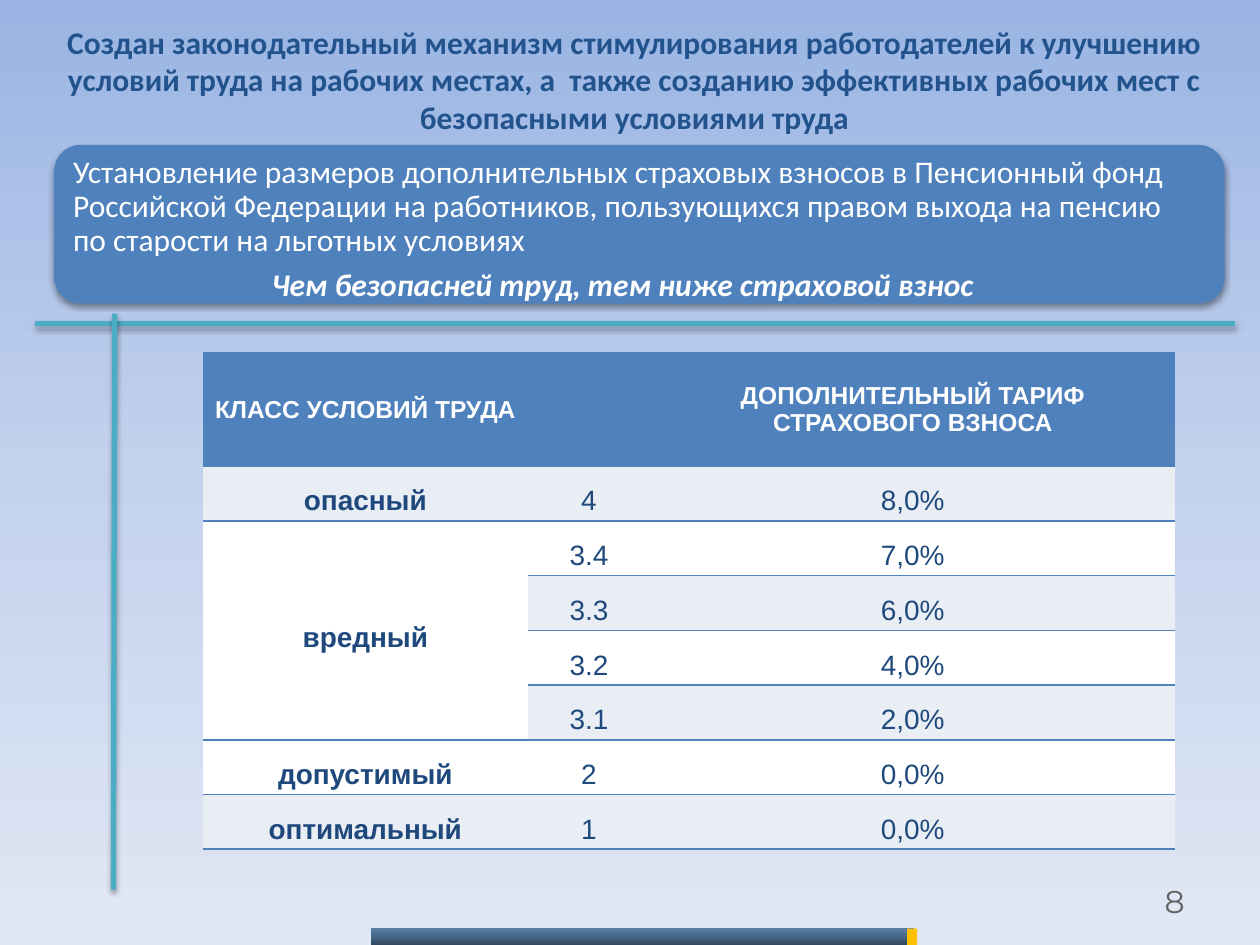
from dataclasses import dataclass

from lxml import etree
from pptx import Presentation
from pptx.dml.color import RGBColor
from pptx.enum.shapes import MSO_CONNECTOR, MSO_SHAPE
from pptx.enum.text import MSO_ANCHOR, MSO_AUTO_SIZE, PP_ALIGN
from pptx.oxml.ns import qn
from pptx.util import Inches, Pt

TOP, MIDDLE = MSO_ANCHOR.TOP, MSO_ANCHOR.MIDDLE
LEFT, CENTER, RIGHT = PP_ALIGN.LEFT, PP_ALIGN.CENTER, PP_ALIGN.RIGHT
RECTANGLE, ROUNDED = MSO_SHAPE.RECTANGLE, MSO_SHAPE.ROUNDED_RECTANGLE
STRAIGHT = MSO_CONNECTOR.STRAIGHT


@dataclass(frozen=True)
class Theme:
    blue: str = "4F81BD"
    navy: str = "1F497D"
    title: str = "23538D"
    teal: str = "4BACC6"
    amber: str = "FFC000"
    white: str = "FFFFFF"
    band: str = "E9EDF4"
    grey: str = "626262"
    backdrop: tuple = ((0, "9AB5E4", 100), (50, "C2D1ED", 100), (100, "E1E8F5", 100))
    footer: tuple = ((0, "003C73", 60), (100, "001C35", 80))
    text_font: str = "Calibri"
    table_font: str = "Arial"
    number_font: str = "Montserrat"
    text_size: int = 18
    header_size: int = 14
    body_size: int = 16


THEME = Theme()

TITLE = ("Создан законодательный механизм стимулирования работодателей к улучшению "
         "условий труда на рабочих местах, а  также созданию эффективных рабочих мест "
         "с безопасными условиями труда")
MEASURE = ("Установление размеров дополнительных страховых взносов в Пенсионный фонд "
           "Российской Федерации на работников, пользующихся правом выхода на пенсию "
           "по старости на льготных условиях")
SLOGAN = " Чем безопасней труд, тем ниже страховой взнос"
TARIFFS = [
    ("КЛАСС УСЛОВИЙ ТРУДА", "", "ДОПОЛНИТЕЛЬНЫЙ ТАРИФ СТРАХОВОГО ВЗНОСА"),
    ("опасный", "4", "8,0%"),
    ("вредный", "3.4", "7,0%"),
    ("", "3.3", "6,0%"),
    ("", "3.2", "4,0%"),
    ("", "3.1", "2,0%"),
    ("допустимый", "2", "0,0%"),
    ("оптимальный", "1", "0,0%"),
]
HARMFUL_ROWS = (2, 5)


def inches(*lengths):
    return [Inches(length) for length in lengths]


def add_element(parent, tag, **attributes):
    return etree.SubElement(parent, qn(tag), {k: str(v) for k, v in attributes.items()})


def add_color(parent, color, opacity=100):
    swatch = add_element(parent, "a:srgbClr", val=color)
    if opacity < 100:
        add_element(swatch, "a:alpha", val=opacity * 1000)


def paint_gradient(fill, owner, stops):
    """Fill from top to bottom with (position, colour, opacity) stops."""
    fill.gradient()
    gradient = next(owner.iter(qn("a:gradFill")))
    stop_list = gradient.find(qn("a:gsLst"))
    for stop in list(stop_list):
        stop_list.remove(stop)
    for position, color, opacity in stops:
        add_color(add_element(stop_list, "a:gs", pos=position * 1000), color, opacity)
    gradient.find(qn("a:lin")).set("ang", "5400000")


def cast_shadow(shape, distance, opacity):
    properties = shape._element.spPr
    effects = properties.find(qn("a:effectLst"))
    if effects is None:
        effects = add_element(properties, "a:effectLst")
    shadow = add_element(effects, "a:outerShdw", blurRad=Pt(3.1), dist=Pt(distance),
                         dir=5400000, rotWithShape=0)
    add_color(shadow, "000000", opacity)


def style_paragraph(paragraph, text, color, font=THEME.text_font, size=THEME.text_size,
                    align=LEFT, bold=False, italic=False, spacing=None):
    paragraph.text = text
    paragraph.alignment = align
    if spacing:
        paragraph.line_spacing = spacing
    for run in paragraph.runs:
        run.font.name = font
        run.font.size = Pt(size)
        run.font.bold = bold
        run.font.italic = italic
        run.font.color.rgb = RGBColor.from_string(color)


def add_block(shapes, kind, box, color=None):
    block = shapes.add_shape(kind, *inches(*box))
    block.shadow.inherit = False
    block.line.fill.background()
    if color:
        block.fill.solid()
        block.fill.fore_color.rgb = RGBColor.from_string(color)
    return block


def add_text_frame(shapes, box):
    frame = shapes.add_textbox(*inches(*box)).text_frame
    frame.word_wrap = True
    frame.vertical_anchor = MIDDLE
    return frame


def add_rule(slide, start, end):
    rule = slide.shapes.add_connector(STRAIGHT, *inches(*start, *end))
    rule.line.color.rgb = RGBColor.from_string(THEME.teal)
    rule.line.width = Pt(3)
    cast_shadow(rule, 1.8, 35)


def set_title(slide):
    title = slide.shapes.title
    title.left, title.top, title.width, title.height = inches(0.35, 0.13, 9.37, 1.01)
    frame = title.text_frame
    frame.vertical_anchor = TOP
    frame.auto_size = MSO_AUTO_SIZE.NONE
    style_paragraph(frame.paragraphs[0], TITLE, THEME.title, align=CENTER, bold=True)


def add_measure_panel(slide):
    panel = slide.shapes.add_group_shape().shapes
    cast_shadow(add_block(panel, ROUNDED, (0.43, 1.15, 9.29, 1.26), THEME.blue), 1.6, 38)
    frame = add_text_frame(panel, (0.5, 1.24, 8.83, 1.17))
    frame.margin_left = frame.margin_right = Inches(0.08)
    frame.margin_top = frame.margin_bottom = Inches(0.08)
    measure = frame.paragraphs[0]
    style_paragraph(measure, MEASURE, THEME.white, spacing=0.9)
    measure.space_after = Pt(6)
    style_paragraph(frame.add_paragraph(), SLOGAN, THEME.white, align=CENTER,
                    bold=True, italic=True, spacing=0.9)


def set_borders(cell):
    """Draw thin lines above and below the cell, none at its sides."""
    properties = cell._tc.get_or_add_tcPr()
    for side in ("a:lnL", "a:lnR"):
        add_element(add_element(properties, side, w=0), "a:noFill")
    for side in ("a:lnT", "a:lnB"):
        line = add_element(properties, side, w=Pt(1))
        add_color(add_element(line, "a:solidFill"), THEME.blue)


def format_cell(cell, text, row, column):
    set_borders(cell)
    is_header = row == 0
    shaded = row % 2 == 1 and not cell.is_spanned
    cell.fill.solid()
    cell.fill.fore_color.rgb = RGBColor.from_string(
        THEME.blue if is_header else THEME.band if shaded else THEME.white)
    cell.vertical_anchor = MIDDLE
    cell.margin_left = cell.margin_right = Inches(0.07)
    cell.margin_top = cell.margin_bottom = 0
    style_paragraph(cell.text_frame.paragraphs[0], text,
                    THEME.white if is_header else THEME.navy, THEME.table_font,
                    THEME.header_size if is_header else THEME.body_size, CENTER,
                    bold=is_header or column == 0, spacing=None if is_header else 1.5)


def add_tariff_table(slide):
    widths, height, header_height = (2.58, 0.97, 4.17), 3.94, 0.9
    table = slide.shapes.add_table(len(TARIFFS), len(widths),
                                   *inches(1.61, 2.8, sum(widths), height)).table
    table.first_row = table.horz_banding = False
    for column, width in zip(table.columns, widths):
        column.width = Inches(width)
    body_height = (height - header_height) / (len(TARIFFS) - 1)
    for index, row in enumerate(table.rows):
        row.height = Inches(body_height if index else header_height)
    first, last = HARMFUL_ROWS
    table.cell(first, 0).merge(table.cell(last, 0))
    for r, values in enumerate(TARIFFS):
        for c, text in enumerate(values):
            format_cell(table.cell(r, c), text, r, c)


def add_footer(slide):
    number = add_text_frame(slide.shapes, (7.17, 6.95, 2.33, 0.4))
    style_paragraph(number.paragraphs[0], "8", THEME.grey, THEME.number_font, align=RIGHT)
    bar = add_block(slide.shapes, RECTANGLE, (2.95, 7.37, 4.3, 0.13))
    paint_gradient(bar.fill, bar._element, THEME.footer)
    add_block(slide.shapes, RECTANGLE, (7.2, 7.37, 0.08, 0.13), THEME.amber)


def main():
    deck = Presentation()
    deck.slide_width, deck.slide_height = inches(10, 7.5)
    slide = deck.slides.add_slide(deck.slide_layouts[5])
    paint_gradient(slide.background.fill, slide._element, THEME.backdrop)
    set_title(slide)
    add_footer(slide)
    add_measure_panel(slide)
    add_tariff_table(slide)
    add_rule(slide, (0.28, 2.57), (9.8, 2.57))
    add_rule(slide, (0.91, 2.49), (0.9, 7.06))
    deck.save("out.pptx")


if __name__ == "__main__":
    main()
